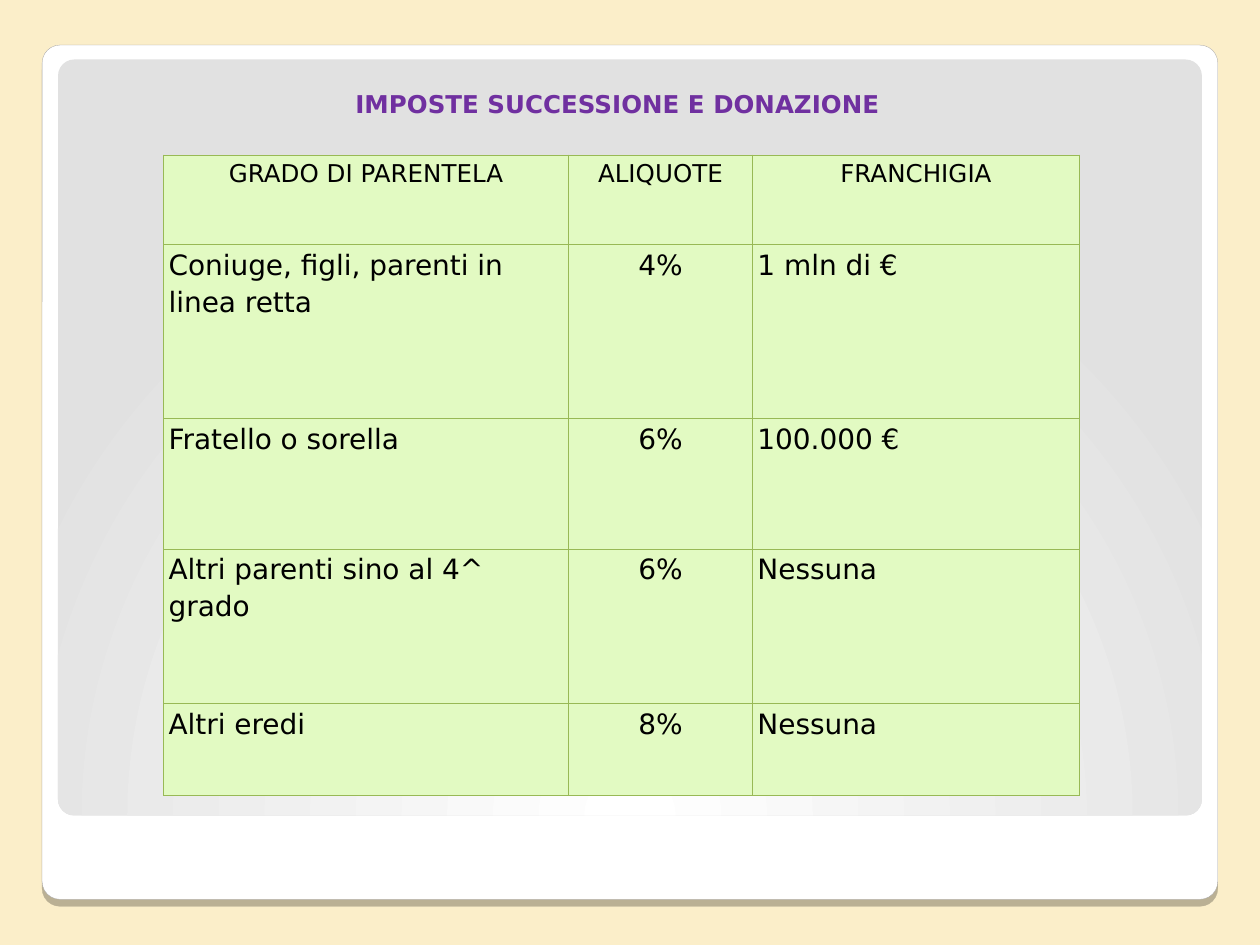
import pptx
import pptx.dml.color
import pptx.enum.shapes
import pptx.enum.text
import pptx.oxml
import pptx.oxml.ns
import pptx.util
from dataclasses import dataclass

Cm = pptx.util.Cm
Pt = pptx.util.Pt
RGB = pptx.dml.color.RGBColor.from_string
ALIGN = pptx.enum.text.PP_ALIGN
NS = pptx.oxml.ns.nsdecls("a")


@dataclass(frozen=True)
class Theme:
    font: str = "DejaVu Sans"
    background: str = "FBEEC9"
    frame: str = "FFFFFF"
    frame_edge: str = "A4A3A3"
    panel_inner: str = "FFFFFF"
    panel_outer: str = "E1E1E1"
    heading: str = "7030A0"
    text: str = "000000"
    cell: str = "E2FAC2"
    grid: str = "98B955"
    small: int = 14
    large: int = 16


theme = Theme()


def write(frame, text, size=theme.large, color=theme.text, bold=False,
          align=ALIGN.LEFT, spacing=1.0):
    paragraph = frame.paragraphs[0]
    paragraph.alignment = align
    paragraph.line_spacing = spacing
    run = paragraph.add_run()
    run.text = text
    run.font.name = theme.font
    run.font.size = Pt(size)
    run.font.bold = bold
    run.font.color.rgb = RGB(color)


def add_rounded(left, top, width, height, radius):
    shape = slide.shapes.add_shape(
        pptx.enum.shapes.MSO_SHAPE.ROUNDED_RECTANGLE,
        Cm(left), Cm(top), Cm(width), Cm(height))
    shape.adjustments[0] = radius / min(width, height)
    shape.shadow.inherit = False
    return shape


deck = pptx.Presentation()
deck.slide_width = Cm(25.4)
deck.slide_height = Cm(19.05)
slide = deck.slides.add_slide(deck.slide_layouts[5])
slide.background.fill.solid()
slide.background.fill.fore_color.rgb = RGB(theme.background)

frame = add_rounded(0.85, 0.91, 23.7, 17.22, 0.36)
frame.fill.solid()
frame.fill.fore_color.rgb = RGB(theme.frame)
frame.line.color.rgb = RGB(theme.frame_edge)
frame.line.width = Pt(0.16)
frame_effects = frame._element.spPr.find(pptx.oxml.ns.qn("a:effectLst"))
frame_effects.append(pptx.oxml.parse_xml(
    f'<a:outerShdw {NS} blurRad="0" dist="{Pt(4)}" dir="5400000" algn="t" rotWithShape="0">'
    '<a:srgbClr val="000000"><a:alpha val="25000"/></a:srgbClr></a:outerShdw>'))

panel = add_rounded(1.17, 1.2, 23.06, 15.24, 0.33)
panel.line.fill.background()
panel.fill.background()
panel_properties = panel._element.spPr
panel_properties.replace(
    panel_properties.find(pptx.oxml.ns.qn("a:noFill")),
    pptx.oxml.parse_xml(
        f'<a:gradFill {NS} rotWithShape="1"><a:gsLst>'
        f'<a:gs pos="0"><a:srgbClr val="{theme.panel_inner}"/></a:gs>'
        f'<a:gs pos="100000"><a:srgbClr val="{theme.panel_outer}"/></a:gs></a:gsLst>'
        '<a:path path="circle"><a:fillToRect l="50000" t="175000" r="50000" b="-75000"/>'
        '</a:path></a:gradFill>'))

heading = slide.shapes.title
heading.left, heading.top, heading.width, heading.height = Cm(1.68), Cm(1.6), Cm(21.54), Cm(1.37)
slide.shapes._spTree.append(heading._element)
heading_text = heading.text_frame
heading_text.word_wrap = True
heading_text.auto_size = pptx.enum.text.MSO_AUTO_SIZE.NONE
heading_text.vertical_anchor = pptx.enum.text.MSO_ANCHOR.TOP
heading_text.margin_left = heading_text.margin_right = Cm(0.25)
heading_text.margin_top = Cm(0.2)
heading_text.margin_bottom = Cm(0.13)
write(heading_text, "IMPOSTE SUCCESSIONE E DONAZIONE", size=theme.small,
      color=theme.heading, bold=True, align=ALIGN.CENTER)

tax_rows = [
    ("GRADO DI PARENTELA", "ALIQUOTE", "FRANCHIGIA"),
    ("Coniuge, figli, parenti in linea retta", "4%", "1 mln di €"),
    ("Fratello o sorella", "6%", "100.000 €"),
    ("Altri parenti sino al 4^ grado", "6%", "Nessuna"),
    ("Altri eredi", "8%", "Nessuna"),
]
column_widths = [8.16, 3.71, 6.59]
row_heights = [1.8, 3.51, 2.63, 3.12, 1.84]
rates = slide.shapes.add_table(
    len(tax_rows), len(column_widths), Cm(3.3), Cm(3.13),
    Cm(sum(column_widths)), Cm(sum(row_heights))).table
for column, width in zip(rates.columns, column_widths):
    column.width = Cm(width)
for row, height in zip(rates.rows, row_heights):
    row.height = Cm(height)

for r, entries in enumerate(tax_rows):
    for c, entry in enumerate(entries):
        cell = rates.cell(r, c)
        cell.margin_left = cell.margin_right = Cm(0.1)
        cell.margin_top = cell.margin_bottom = 0
        cell_properties = cell._tc.get_or_add_tcPr()
        for side in ("lnL", "lnR", "lnT", "lnB"):
            cell_properties.append(pptx.oxml.parse_xml(
                f'<a:{side} {NS} w="{Pt(0.75)}"><a:solidFill>'
                f'<a:srgbClr val="{theme.grid}"/></a:solidFill></a:{side}>'))
        cell.fill.solid()
        cell.fill.fore_color.rgb = RGB(theme.cell)
        write(cell.text_frame, entry, size=theme.small if r == 0 else theme.large,
              align=ALIGN.CENTER if r == 0 or c == 1 else ALIGN.LEFT, spacing=1.15)

deck.save("out.pptx")
